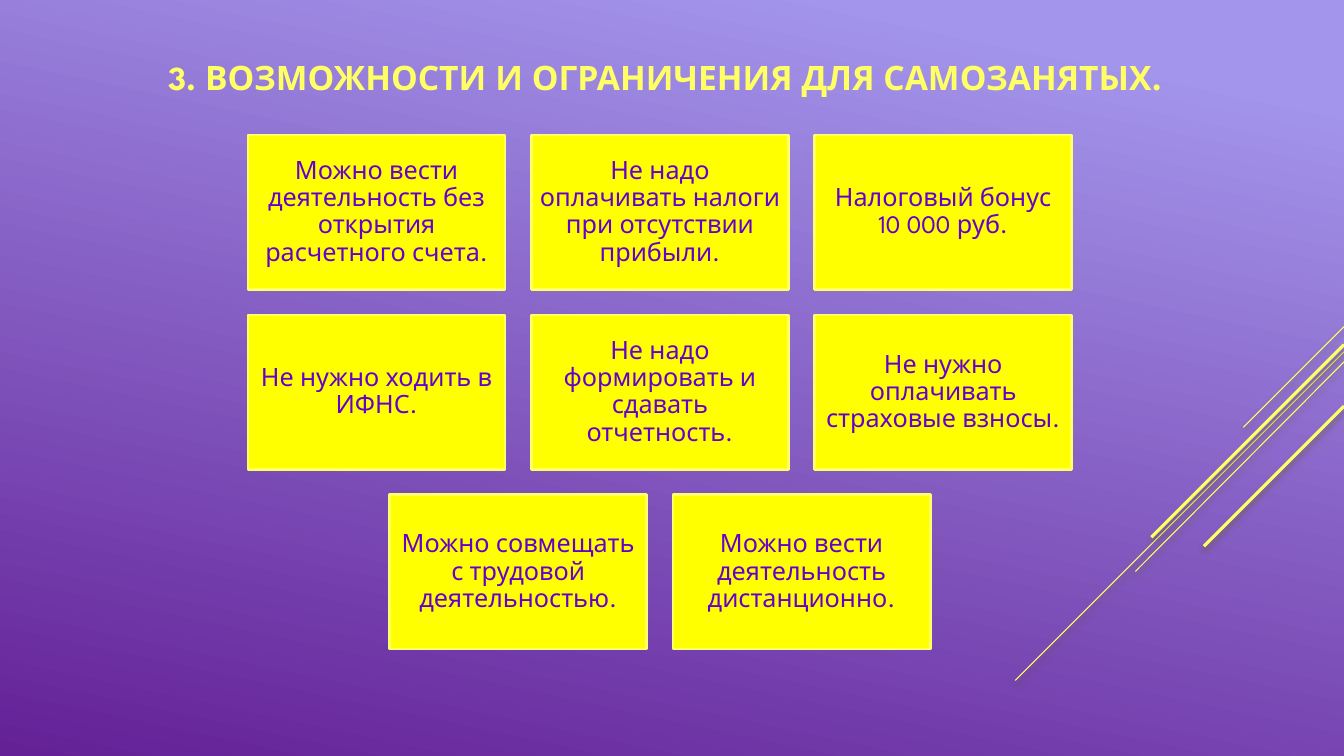
from lxml import etree
from pptx import Presentation
from pptx.dml.color import RGBColor
from pptx.enum.shapes import MSO_CONNECTOR, MSO_SHAPE
from pptx.enum.text import MSO_ANCHOR, MSO_AUTO_SIZE, PP_ALIGN
from pptx.oxml import parse_xml
from pptx.oxml.ns import nsdecls, qn
from pptx.util import Inches, Pt

TITLE = "3. ВОЗМОЖНОСТИ И ОГРАНИЧЕНИЯ ДЛЯ САМОЗАНЯТЫХ."
CARD_ROWS = [
    [
        "Можно вести деятельность без открытия расчетного счета.",
        "Не надо оплачивать налоги при отсутствии прибыли.",
        "Налоговый бонус 10 000 руб.",
    ],
    [
        "Не нужно ходить в ИФНС.",
        "Не надо формировать и сдавать отчетность.",
        "Не нужно оплачивать страховые взносы.",
    ],
    [
        "Можно совмещать с трудовой деятельностью.",
        "Можно вести деятельность дистанционно.",
    ],
]
DIAGONALS = [
    (3.24, 12.33, 4.24, 0.75),
    (3.49, 10.07, 6.75, 0.75),
    (3.59, 11.26, 5.67, 0.75),
    (3.42, 11.42, 5.33, 2.25),
    (4.03, 11.94, 5.42, 2.25),
]

FONT = "League Spartan"
LILAC = RGBColor(0xA3, 0x95, 0xEB)
PURPLE = RGBColor(0x64, 0x21, 0x97)
PALE_YELLOW = RGBColor(0xFF, 0xFF, 0x66)
YELLOW = RGBColor(0xFF, 0xFF, 0x00)
VIOLET = RGBColor(0x66, 0x00, 0xCC)
SHADOW = RGBColor(0x5A, 0x5A, 0x00)

STRAIGHT = MSO_CONNECTOR.STRAIGHT
RECTANGLE = MSO_SHAPE.RECTANGLE
CENTER = PP_ALIGN.CENTER
MIDDLE = MSO_ANCHOR.MIDDLE
BOTTOM = MSO_ANCHOR.BOTTOM
NO_AUTOFIT = MSO_AUTO_SIZE.NONE

PAGE_WIDTH, PAGE_HEIGHT = 13.33, 7.5
CARD_WIDTH, CARD_HEIGHT = 2.55, 1.53
STEP_X, STEP_Y = 2.81, 1.785
CARDS_CENTER, CARDS_TOP = 6.545, 1.34


def write_text(box, text, *, size, color, bold=False, anchor=MIDDLE, inset=0.07, spacing=0.9):
    """Fill a shape with one centred, formatted paragraph."""
    frame = box.text_frame
    frame.word_wrap = True
    frame.auto_size = NO_AUTOFIT
    frame.vertical_anchor = anchor
    frame.margin_left = frame.margin_right = Inches(inset)
    frame.margin_top = frame.margin_bottom = Inches(min(inset, 0.07))
    para = frame.paragraphs[0]
    para.alignment = CENTER
    para.line_spacing = spacing
    span = para.add_run()
    span.text = text
    span.font.name = FONT
    span.font.size = Pt(size)
    span.font.bold = bold
    span.font.color.rgb = color


def paint_background(page):
    """Give the page its diagonal gradient."""
    fill = page.background.fill
    fill.gradient()
    fill.gradient_angle = 360 - 102
    for stop, (position, color) in zip(fill.gradient_stops, [(0.1, LILAC), (1, PURPLE)]):
        stop.position = position
        stop.color.rgb = color


def add_diagonal(page, top, end_x, end_y, weight):
    """Draw a shadowed line from the right edge of the page."""
    line = page.shapes.add_connector(
        STRAIGHT, Inches(PAGE_WIDTH), Inches(top), Inches(end_x), Inches(end_y)
    )
    line.line.color.rgb = PALE_YELLOW
    line.line.width = Pt(weight)
    effects = parse_xml(f"<a:effectLst {nsdecls('a')}/>")
    shadow = etree.SubElement(
        effects, qn("a:outerShdw"), blurRad=str(Pt(4.5)), dist=str(Pt(3)),
        dir="5400000", rotWithShape="0",
    )
    color = etree.SubElement(shadow, qn("a:srgbClr"), val=str(SHADOW))
    etree.SubElement(color, qn("a:alpha"), val="48000")
    line._element.spPr.append(effects)


def add_card(page, text, left, top):
    """Add one yellow card."""
    card = page.shapes.add_shape(
        RECTANGLE, Inches(left), Inches(top), Inches(CARD_WIDTH), Inches(CARD_HEIGHT)
    )
    card.shadow.inherit = False
    card.fill.solid()
    card.fill.fore_color.rgb = YELLOW
    card.line.color.rgb = PALE_YELLOW
    card.line.width = Pt(2)
    write_text(card, text, size=18, color=VIOLET)


def main():
    """Build the slide and save it."""
    deck = Presentation()
    deck.slide_width, deck.slide_height = Inches(PAGE_WIDTH), Inches(PAGE_HEIGHT)
    page = deck.slides.add_slide(deck.slide_layouts[5])
    paint_background(page)
    for diagonal in DIAGONALS:
        add_diagonal(page, *diagonal)

    title = page.shapes.title
    title.left, title.top = Inches(0.35), Inches(0.24)
    title.width, title.height = Inches(12.49), Inches(0.8)
    write_text(title, TITLE, size=24, color=PALE_YELLOW, bold=True,
               anchor=BOTTOM, inset=0.1)

    for row, texts in enumerate(CARD_ROWS):
        row_width = (len(texts) - 1) * STEP_X + CARD_WIDTH
        for column, text in enumerate(texts):
            left = CARDS_CENTER - row_width / 2 + column * STEP_X
            add_card(page, text, left, CARDS_TOP + row * STEP_Y)

    deck.save("out.pptx")


if __name__ == "__main__":
    main()
